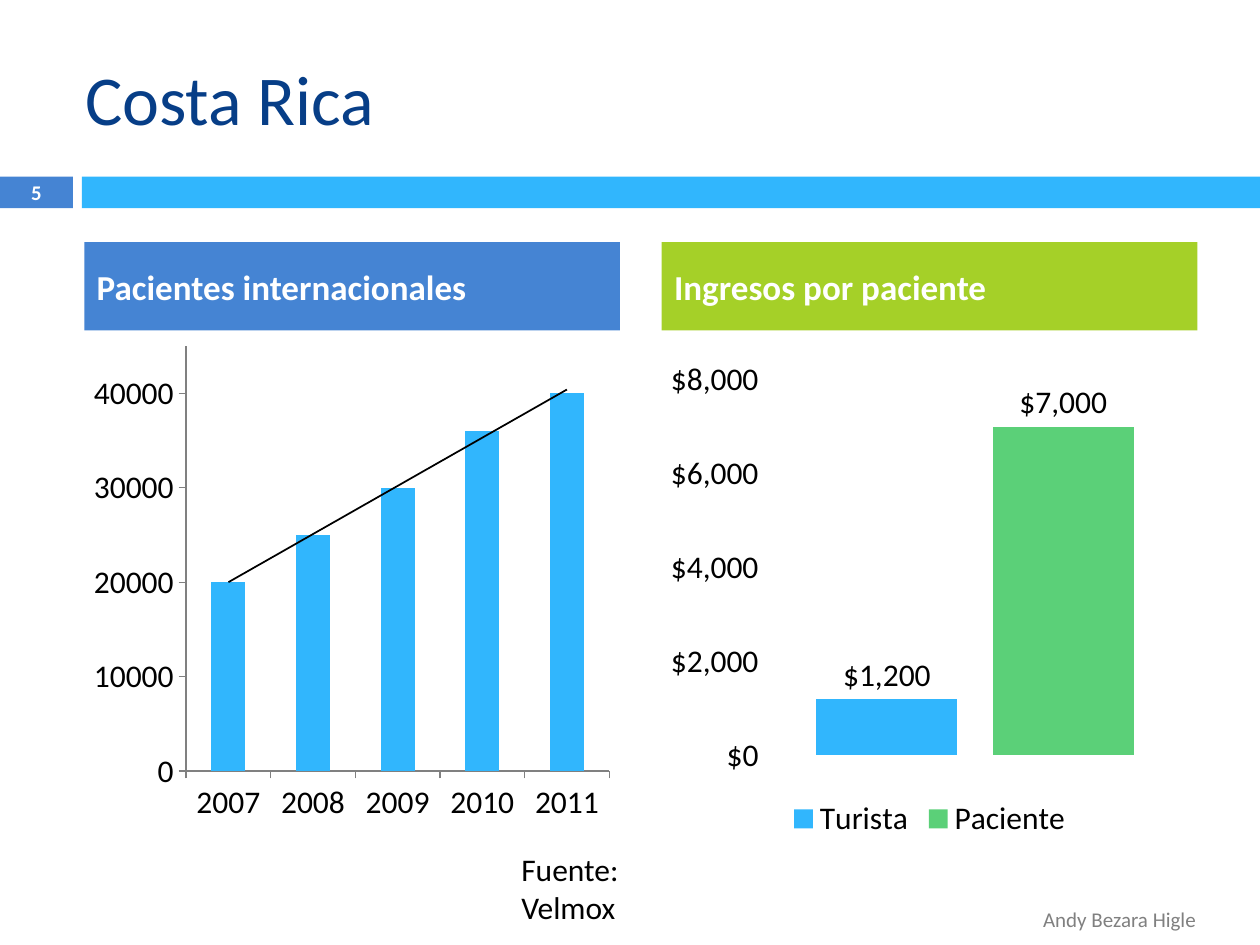
from lxml import etree
from pptx import Presentation
from pptx.chart.data import CategoryChartData
from pptx.dml.color import RGBColor
from pptx.enum.chart import XL_CHART_TYPE, XL_LABEL_POSITION, XL_LEGEND_POSITION, XL_TICK_MARK
from pptx.enum.shapes import MSO_SHAPE
from pptx.enum.text import MSO_ANCHOR, PP_ALIGN
from pptx.oxml import parse_xml
from pptx.oxml.ns import nsdecls, qn
from pptx.util import Cm, Pt

COLUMNS = XL_CHART_TYPE.COLUMN_CLUSTERED
BOTTOM = XL_LEGEND_POSITION.BOTTOM
OUTSIDE_END = XL_LABEL_POSITION.OUTSIDE_END
TICK_NONE, TICK_OUT = XL_TICK_MARK.NONE, XL_TICK_MARK.OUTSIDE
MIDDLE, TOP = MSO_ANCHOR.MIDDLE, MSO_ANCHOR.TOP
LEFT, CENTER, RIGHT = PP_ALIGN.LEFT, PP_ALIGN.CENTER, PP_ALIGN.RIGHT

NAVY = RGBColor(0x07, 0x3E, 0x87)
BLUE = RGBColor(0x45, 0x84, 0xD3)
SKY = RGBColor(0x31, 0xB6, 0xFD)
LIME = RGBColor(0xA5, 0xD0, 0x28)
GREEN = RGBColor(0x5B, 0xD0, 0x78)
GRAY = RGBColor(0x80, 0x80, 0x80)
WHITE = RGBColor(0xFF, 0xFF, 0xFF)
BLACK = RGBColor(0, 0, 0)
FONT = "Calibri"
DOLLARS = '"$"#,##0'

PANEL_LEFTS = (1.7, 13.34)
PANEL_WIDTH = 10.8
HEADING_TOP, HEADING_HEIGHT = 4.88, 1.78
CHART_HEIGHT = 9.96
BAND_TOP, BAND_HEIGHT = 3.56, 0.64

BANDS = [(0, 1.47, BLUE), (1.65, 23.75, SKY)]
HEADINGS = [("Pacientes internacionales", BLUE), ("Ingresos por paciente", LIME)]
TEXTS = [
    ("Costa Rica", (1.47, 0.76, 22.66, 2.41), 40, NAVY, False, LEFT, MIDDLE),
    ("Andy Bezara Higle", (1.7, 18.01, 22.66, 1.02), 12, GRAY, False, RIGHT, MIDDLE),
    ("5", (0, 3.53, 1.47, 0.69), 11.9, WHITE, True, CENTER, MIDDLE),
    ("Fuente: Velmox", (10.26, 17.02, 4.1, 1.02), 18, BLACK, False, LEFT, TOP),
]
PATIENTS = {
    "top": 6.78, "categories": ["2007", "2008", "2009", "2010", "2011"],
    "series": [("Series 1", [20000, 25000, 30000, 36000, 40000], SKY)],
    "format": "General", "scale": (45000, 10000), "gap": 150, "overlap": 0,
    "plot": (0.19, 0.02, 0.79, 0.86),
}
INCOME = {
    "top": 7.06, "categories": ["1"],
    "series": [("Turista", [1200], SKY), ("Paciente", [7000], GREEN)],
    "format": DOLLARS, "scale": (8000, 2000), "gap": 75, "overlap": -25,
    "plot": (0.19, 0.06, 0.79, 0.76),
}


def style(paragraph, size, color, bold):
    font = paragraph.font
    font.name, font.size, font.bold = FONT, Pt(size), bold
    font.color.rgb = color


def add_block(slide, left, top, width, height, color):
    block = slide.shapes.add_shape(MSO_SHAPE.RECTANGLE, Cm(left), Cm(top), Cm(width), Cm(height))
    block.shadow.inherit = False
    block.fill.solid()
    block.fill.fore_color.rgb = color
    block.line.fill.background()
    return block


def add_text(slide, words, box, size, color, bold, align, anchor):
    frame = slide.shapes.add_textbox(*map(Cm, box)).text_frame
    frame.word_wrap = True
    frame.vertical_anchor = anchor
    paragraph = frame.paragraphs[0]
    paragraph.text = words
    paragraph.alignment = align
    style(paragraph, size, color, bold)


def add_heading(slide, left, words, color):
    block = add_block(slide, left, HEADING_TOP, PANEL_WIDTH, HEADING_HEIGHT, color)
    block.text_frame.vertical_anchor = MIDDLE
    paragraph = block.text_frame.paragraphs[0]
    paragraph.text = words
    paragraph.alignment = LEFT
    paragraph.space_before = Pt(7)
    style(paragraph, 20, WHITE, True)


def place_plot(chart, bounds):
    area = chart.plots[0]._element.getparent()
    for old in area.findall(qn("c:layout")):
        area.remove(old)
    layout = etree.Element(qn("c:layout"))
    manual = etree.SubElement(layout, qn("c:manualLayout"))
    settings = [("layoutTarget", "inner"), ("xMode", "edge"), ("yMode", "edge")]
    settings += zip("xywh", bounds)
    for tag, value in settings:
        etree.SubElement(manual, qn(f"c:{tag}")).set("val", str(value))
    area.insert(0, layout)


def add_columns(slide, left, content):
    data = CategoryChartData(number_format=content["format"])
    data.categories = content["categories"]
    for name, values, _ in content["series"]:
        data.add_series(name, values)
    chart = slide.shapes.add_chart(
        COLUMNS, Cm(left), Cm(content["top"]), Cm(PANEL_WIDTH), Cm(CHART_HEIGHT), data).chart
    chart.has_title = False
    chart.has_legend = False
    chart.font.name, chart.font.size = FONT, Pt(18)
    chart.font.color.rgb = BLACK
    plot = chart.plots[0]
    plot.vary_by_categories = False
    plot.gap_width, plot.overlap = content["gap"], content["overlap"]
    for series, (_, _, color) in zip(plot.series, content["series"]):
        series.format.fill.solid()
        series.format.fill.fore_color.rgb = color
    axis = chart.value_axis
    axis.minimum_scale = 0
    axis.maximum_scale, axis.major_unit = content["scale"]
    axis.has_major_gridlines = False
    axis.tick_labels.number_format = content["format"]
    axis.tick_labels.number_format_is_linked = False
    place_plot(chart, content["plot"])
    return chart


def add_trend(series):
    series._element.find(qn("c:cat")).addprevious(parse_xml(
        f'<c:trendline {nsdecls("c", "a")}><c:spPr><a:ln w="12700"><a:solidFill>'
        f'<a:srgbClr val="{BLACK}"/></a:solidFill></a:ln></c:spPr>'
        '<c:trendlineType val="linear"/><c:dispRSqr val="0"/><c:dispEq val="0"/></c:trendline>'))


def add_patients(slide):
    chart = add_columns(slide, PANEL_LEFTS[0], PATIENTS)
    for axis in (chart.category_axis, chart.value_axis):
        axis.major_tick_mark = TICK_OUT
        axis.format.line.color.rgb = GRAY
    add_trend(chart.plots[0].series[0])


def add_income(slide):
    chart = add_columns(slide, PANEL_LEFTS[1], INCOME)
    chart.category_axis.visible = False
    chart.value_axis.major_tick_mark = TICK_NONE
    chart.value_axis.format.line.fill.background()
    chart.has_legend = True
    chart.legend.position = BOTTOM
    chart.legend.include_in_layout = False
    for series in chart.plots[0].series:
        labels = series.data_labels
        labels.show_value = True
        labels.position = OUTSIDE_END
        labels.number_format = DOLLARS
        labels.number_format_is_linked = False


def main():
    deck = Presentation()
    deck.slide_width, deck.slide_height = Cm(25.4), Cm(19.05)
    slide = deck.slides.add_slide(deck.slide_layouts[6])
    for left, width, color in BANDS:
        add_block(slide, left, BAND_TOP, width, BAND_HEIGHT, color)
    for left, heading in zip(PANEL_LEFTS, HEADINGS):
        add_heading(slide, left, *heading)
    add_patients(slide)
    add_income(slide)
    for text in TEXTS:
        add_text(slide, *text)
    deck.save("out.pptx")


if __name__ == "__main__":
    main()
